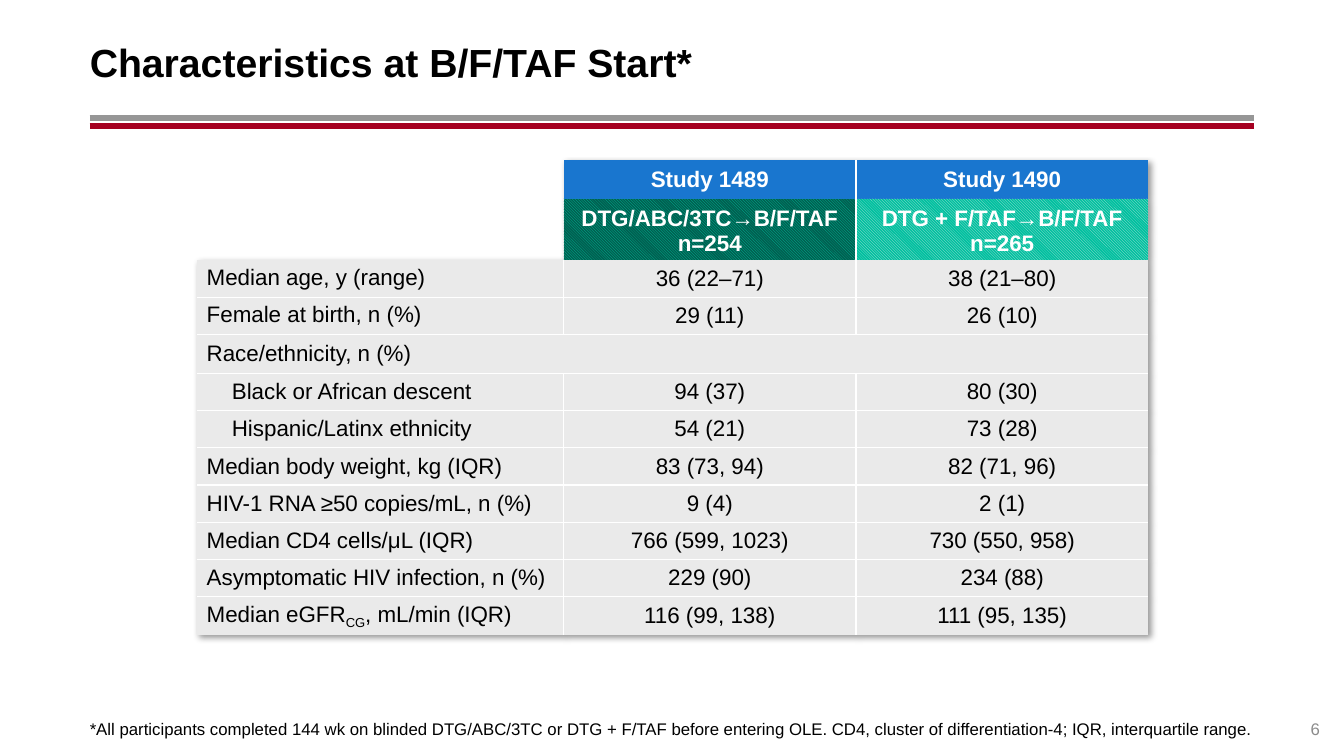
"""Build the slide of participant characteristics at the start of B/F/TAF."""
import dataclasses
import typing

import lxml.etree
import pptx
import pptx.dml.color
import pptx.dml.fill
import pptx.enum.dml
import pptx.enum.shapes
import pptx.enum.text
import pptx.oxml
import pptx.oxml.ns
import pptx.slide
import pptx.table
import pptx.text.text
import pptx.util

SCALE = 9144
COLORS = {
    "black": "000000", "white": "FFFFFF", "grey": "969696", "red": "A50021",
    "page": "8C8C8C", "blue": "1976CF", "cell": "EAEAEA",
    "teal": "00C0A0", "pine": "006050", "mint": "B8E2D8",
}
ALIGN = pptx.enum.text.PP_ALIGN
ANCHOR = pptx.enum.text.MSO_ANCHOR
PLAIN = "{2D5ABB26-0587-4C30-8999-92F81FD0307C}"
WIDTHS = (364, 290, 290)
HEADS = 2
HEIGHTS = (35, 61)
BODY = 37
SIDES = ("lnL", "lnR", "lnT", "lnB")


@dataclasses.dataclass(frozen=True)
class Label:
    text: str
    box: tuple[int, int, int, int]
    font: dict[str, typing.Any]
    color: str = "black"
    anchor: ANCHOR = ANCHOR.BOTTOM
    align: ALIGN = ALIGN.LEFT


@dataclasses.dataclass(frozen=True)
class Rule:
    top: int
    color: str


@dataclasses.dataclass(frozen=True)
class Row:
    cells: tuple[str, str, str]
    fills: tuple[tuple[str, ...], ...] = (("cell",),) * 3
    indent: int = 0
    space: float = 1.0
    split: bool = True
    anchor: ANCHOR = ANCHOR.MIDDLE


LABELS = (
    Label("Characteristics at B/F/TAF Start*", (89, 18, 1155, 86),
          {"size": pptx.util.Pt(28), "bold": True}, anchor=ANCHOR.MIDDLE),
    Label("*All participants completed 144 wk on blinded DTG/ABC/3TC or DTG + F/TAF "
          "before entering OLE. CD4, cluster of differentiation-4; IQR, interquartile range.",
          (89, 713, 1155, 20), {"size": pptx.util.Pt(12)}),
    Label("6", (1244, 693, 65, 40), {"size": pptx.util.Pt(12)}, "page", align=ALIGN.RIGHT),
)
RULES = (Rule(117, "grey"), Rule(125, "red"))
ROWS = (
    Row(("", "Study 1489", "Study 1490"), ((), ("blue",), ("blue",))),
    Row(("", "DTG/ABC/3TC→B/F/TAF\nn=254", "DTG + F/TAF→B/F/TAF\nn=265"),
        ((), ("teal", "pine"), ("mint", "teal")), anchor=ANCHOR.BOTTOM),
    Row(("Median age, y (range)", "36 (22–71)", "38 (21–80)"), space=0.9),
    Row(("Female at birth, n (%)", "29 (11)", "26 (10)"), space=0.9),
    Row(("Race/ethnicity, n (%)", "", ""), split=False),
    Row(("Black or African descent", "94 (37)", "80 (30)"), indent=25),
    Row(("Hispanic/Latinx ethnicity", "54 (21)", "73 (28)"), indent=25),
    Row(("Median body weight, kg (IQR)", "83 (73, 94)", "82 (71, 96)")),
    Row(("HIV-1 RNA ≥50 copies/mL, n (%)", "9 (4)", "2 (1)")),
    Row(("Median CD4 cells/μL (IQR)", "766 (599, 1023)", "730 (550, 958)")),
    Row(("Asymptomatic HIV infection, n (%)", "229 (90)", "234 (88)")),
    Row(("Median eGFR|CG|, mL/min (IQR)", "116 (99, 138)", "111 (95, 135)")),
)


def px(size: int) -> int:
    return size * SCALE


def rgb(name: str) -> pptx.dml.color.RGBColor:
    return pptx.dml.color.RGBColor.from_string(COLORS[name])


def apply(target: object, form: dict[str, typing.Any]) -> None:
    for name, value in form.items():
        setattr(target, name, value)


def style(font: pptx.text.text.Font, form: dict[str, typing.Any], color: str) -> None:
    apply(font, {"name": "Arial", **form})
    font.color.rgb = rgb(color)


def draw_label(slide: pptx.slide.Slide, label: Label) -> None:
    frame = slide.shapes.add_textbox(*map(px, label.box)).text_frame
    apply(frame, {"word_wrap": True, "vertical_anchor": label.anchor, "margin_left": 0,
                  "margin_right": 0, "margin_top": 0, "margin_bottom": 0})
    para = frame.paragraphs[0]
    para.alignment = label.align
    run = para.add_run()
    run.text = label.text
    style(run.font, label.font, label.color)


def draw_rule(slide: pptx.slide.Slide, rule: Rule) -> None:
    line = slide.shapes.add_connector(
        pptx.enum.shapes.MSO_CONNECTOR.STRAIGHT,
        px(89), px(rule.top), px(1244), px(rule.top))
    line.line.width = pptx.util.Pt(4.25)
    line.line.color.rgb = rgb(rule.color)
    lxml.etree.SubElement(line._element.spPr, pptx.oxml.ns.qn("a:effectLst"))


def paint(fill: pptx.dml.fill.FillFormat, names: tuple[str, ...]) -> None:
    if len(names) == 2:
        fill.patterned()
        fill.pattern = pptx.enum.dml.MSO_PATTERN.LIGHT_DOWNWARD_DIAGONAL
        fill.fore_color.rgb, fill.back_color.rgb = map(rgb, names)
    elif names:
        fill.solid()
        fill.fore_color.rgb = rgb(names[0])
    else:
        fill.background()


def edges(row: int, col: int) -> set[str]:
    body, split = row >= HEADS, ROWS[row].split
    tests = {
        "lnL": split and col > (0 if body else 1),
        "lnR": split and col < 2 and (body or col == 1),
        "lnT": row > HEADS,
        "lnB": body and row < len(ROWS) - 1,
    }
    return {side for side, shown in tests.items() if shown}


def border(cell: pptx.table._Cell, shown: set[str]) -> None:
    props = cell._tc.get_or_add_tcPr()
    space = pptx.oxml.ns.nsdecls("a")
    for place, side in enumerate(SIDES):
        ink = (f'<a:solidFill><a:srgbClr val="{COLORS["white"]}"/></a:solidFill>'
               if side in shown else "<a:noFill/>")
        props.insert(place, pptx.oxml.parse_xml(
            f'<a:{side} {space} w="12700">{ink}</a:{side}>'))


def write(cell: pptx.table._Cell, row: Row, col: int, head: bool) -> None:
    cell.text_frame.text = row.cells[col]
    for para in cell.text_frame.paragraphs:
        para.alignment = ALIGN.CENTER if col else ALIGN.LEFT
        if not col:
            para.line_spacing = row.space
        parts = para.text.split("|")
        para.clear()
        for place, part in enumerate(parts):
            run = para.add_run()
            run.text = part
            style(run.font, {"size": pptx.util.Pt(16), "bold": head},
                  "white" if head else "black")
            if place % 2:
                run.font._element.set("baseline", "-25000")


def draw_table(slide: pptx.slide.Slide) -> None:
    highs = HEIGHTS + (BODY,) * (len(ROWS) - HEADS)
    table = slide.shapes.add_table(len(ROWS), len(WIDTHS), px(195), px(159),
                                   px(sum(WIDTHS)), px(sum(highs))).table
    apply(table, {"first_row": False, "horz_banding": False})
    props = table._tbl.tblPr
    props.find(pptx.oxml.ns.qn("a:tableStyleId")).text = PLAIN
    props.insert(0, pptx.oxml.parse_xml(
        f'<a:effectLst {pptx.oxml.ns.nsdecls("a")}>'
        '<a:outerShdw blurRad="50800" dist="38100" dir="2700000" algn="tl" rotWithShape="0">'
        f'<a:srgbClr val="{COLORS["black"]}"><a:alpha val="40000"/></a:srgbClr>'
        '</a:outerShdw></a:effectLst>'))
    for col, wide in enumerate(WIDTHS):
        table.columns[col].width = px(wide)
    for place, row in enumerate(ROWS):
        table.rows[place].height = px(highs[place])
        for col, names in enumerate(row.fills):
            cell = table.cell(place, col)
            apply(cell, {"vertical_anchor": row.anchor, "margin_top": px(4),
                         "margin_bottom": px(4), "margin_right": px(10),
                         "margin_left": px(10 + (0 if col else row.indent))})
            write(cell, row, col, place < HEADS)
            paint(cell.fill, names)
            border(cell, edges(place, col))


def main() -> None:
    deck = pptx.Presentation()
    apply(deck, {"slide_width": px(1333), "slide_height": px(750)})
    slide = deck.slides.add_slide(deck.slide_layouts[6])
    for rule in RULES:
        draw_rule(slide, rule)
    for label in LABELS:
        draw_label(slide, label)
    draw_table(slide)
    deck.save("out.pptx")


if __name__ == "__main__":
    main()
